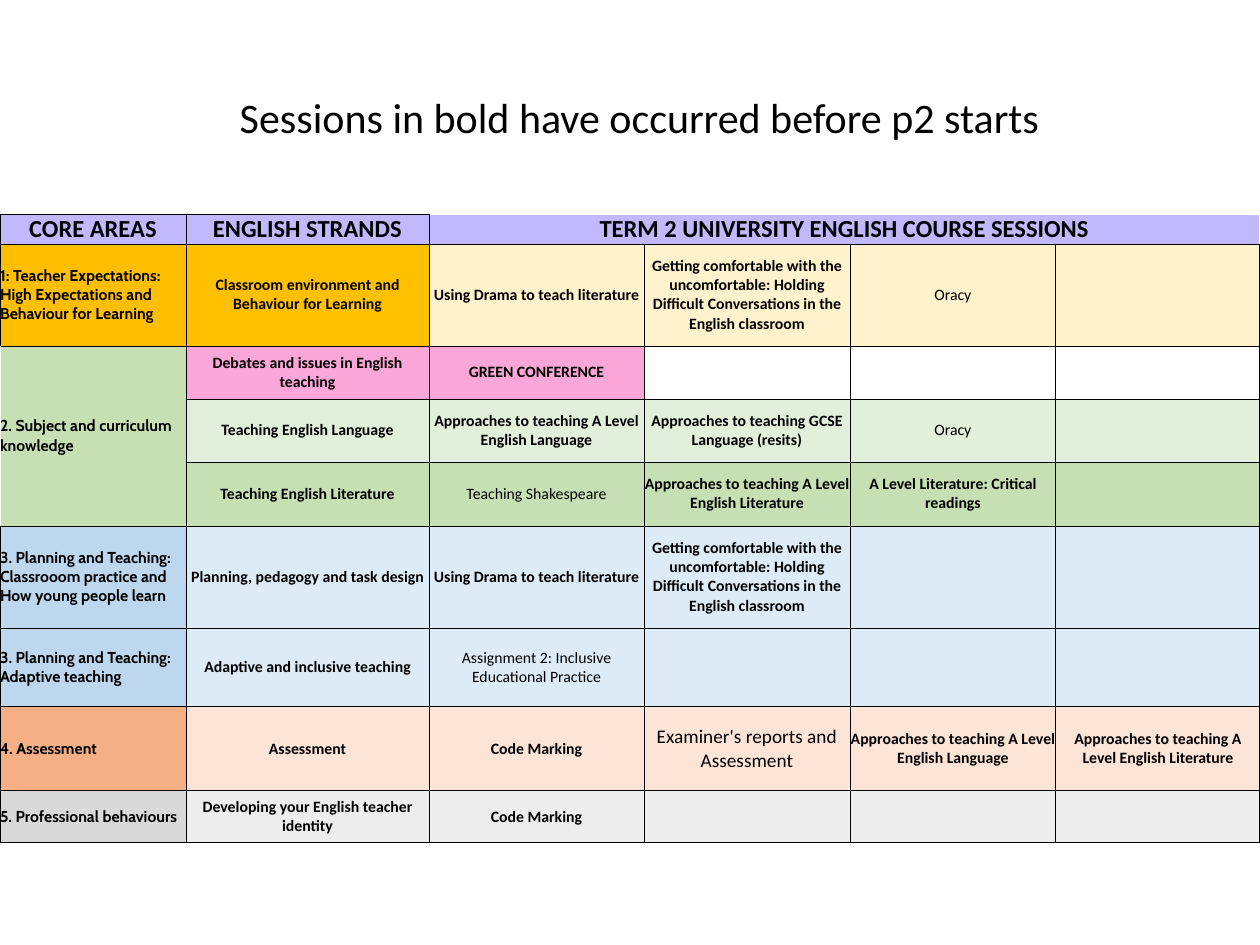
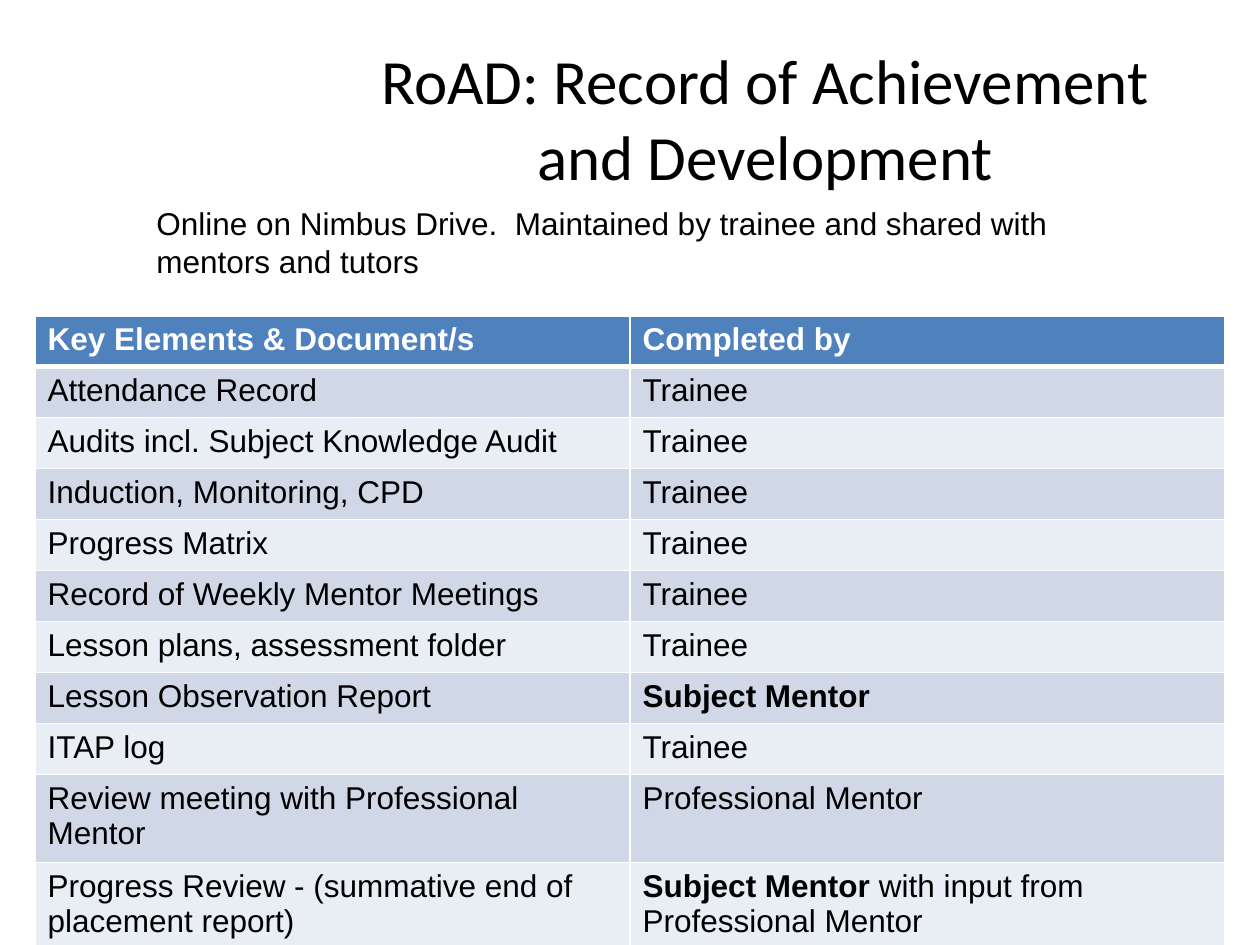
from lxml.etree import SubElement
from pptx import Presentation
from pptx.dml.color import RGBColor
from pptx.enum.text import MSO_ANCHOR as Anchor, PP_ALIGN as Align
from pptx.oxml.ns import qn
from pptx.util import Pt

PX = 914400 / 126

BLACK = RGBColor(0x00, 0x00, 0x00)
WHITE = RGBColor(0xFF, 0xFF, 0xFF)
LILAC = RGBColor(0xC1, 0xB8, 0xFE)
AMBER = RGBColor(0xFF, 0xBF, 0x00)
GOLD = RGBColor(0xFF, 0xC0, 0x00)
CREAM = RGBColor(0xFF, 0xF2, 0xCC)
PINK = RGBColor(0xFB, 0xA6, 0xD8)
GREEN = RGBColor(0xC6, 0xE0, 0xB4)
PALE_GREEN = RGBColor(0xE2, 0xEF, 0xDA)
BLUE = RGBColor(0xBD, 0xD7, 0xEE)
PALE_BLUE = RGBColor(0xDD, 0xEB, 0xF7)
ORANGE = RGBColor(0xF4, 0xB0, 0x84)
PEACH = RGBColor(0xFC, 0xE4, 0xD6)
GREY = RGBColor(0xD9, 0xD9, 0xD9)
PALE_GREY = RGBColor(0xED, 0xED, 0xED)
HEADER_BLUE = RGBColor(0x4F, 0x81, 0xBD)
BAND_DARK = RGBColor(0xD0, 0xD8, 0xE8)
BAND_LIGHT = RGBColor(0xE9, 0xED, 0xF4)


def add_table(slide, left, top, widths, heights):
    lengths = [round(n * PX) for n in (left, top, sum(widths), sum(heights))]
    table = slide.shapes.add_table(len(heights), len(widths), *lengths).table
    table.first_row = table.horz_banding = False
    for column, width in zip(table.columns, widths):
        column.width = round(width * PX)
    for row, height in zip(table.rows, heights):
        row.height = round(height * PX)
    return table


def style_cell(cell, fill, line, borders):
    properties = cell._tc.get_or_add_tcPr()
    for side in "LRTB":
        if side in borders:
            border = SubElement(properties, qn(f"a:ln{side}"), w=str(Pt(borders[side])))
            solid = SubElement(border, qn("a:solidFill"))
            SubElement(solid, qn("a:srgbClr"), val=str(line))
    cell.fill.solid()
    cell.fill.fore_color.rgb = fill


presentation = Presentation()
presentation.slide_width = round(1260 * PX)
presentation.slide_height = round(945 * PX)
blank = presentation.slide_layouts[6]
sessions_slide = presentation.slides.add_slide(blank)
road_slide = presentation.slides.add_slide(blank)

drama = "Using Drama to teach literature"
conversations = ("Getting comfortable with the uncomfortable: Holding Difficult "
                 "Conversations in the English classroom")
level_language = "Approaches to teaching A Level English Language"
level_literature = "Approaches to teaching A Level English Literature"
examiner = "Examiner's reports and Assessment"
upcoming = {"Oracy", "Teaching Shakespeare",
            "Assignment 2: Inclusive Educational Practice", examiner}

session_rows = [
    (30, LILAC, LILAC, LILAC, ["CORE AREAS", "ENGLISH STRANDS",
                               "TERM 2 UNIVERSITY ENGLISH COURSE SESSIONS"]),
    (102, AMBER, GOLD, CREAM, [
        "1: Teacher Expectations: High Expectations and Behaviour for Learning",
        "Classroom environment and Behaviour for Learning",
        drama, conversations, "Oracy"]),
    (53, GREEN, PINK, WHITE, ["2. Subject and curriculum knowledge",
                              "Debates and issues in English teaching",
                              "GREEN CONFERENCE"]),
    (63, GREEN, PALE_GREEN, PALE_GREEN, [
        "", "Teaching English Language", level_language,
        "Approaches to teaching GCSE Language (resits)", "Oracy"]),
    (64, GREEN, GREEN, GREEN, [
        "", "Teaching English Literature", "Teaching Shakespeare",
        level_literature, "A Level Literature: Critical readings"]),
    (102, BLUE, PALE_BLUE, PALE_BLUE, [
        "3. Planning and Teaching: Classrooom practice and How young people learn",
        "Planning, pedagogy and task design", drama, conversations]),
    (79, BLUE, PALE_BLUE, PALE_BLUE, [
        "3. Planning and Teaching: Adaptive teaching",
        "Adaptive and inclusive teaching",
        "Assignment 2: Inclusive Educational Practice"]),
    (84, ORANGE, PEACH, PEACH, ["4. Assessment", "Assessment", "Code Marking",
                                examiner, level_language, level_literature]),
    (52, GREY, PALE_GREY, PALE_GREY, ["5. Professional behaviours",
                                      "Developing your English teacher identity",
                                      "Code Marking"]),
]
sessions = add_table(sessions_slide, 0, 214, [186, 243, 215, 206, 206, 204],
                     [row[0] for row in session_rows])
for r, (height, area_fill, strand_fill, session_fill, texts) in enumerate(session_rows):
    fills = [area_fill, strand_fill] + [session_fill] * 4
    for c, fill in enumerate(fills):
        text = texts[c] if c < len(texts) else ""
        if text == "GREEN CONFERENCE":
            fill = PINK
        sides = "LRTB"
        if r == 0 and c >= 2:
            sides = "LB"
        elif c == 0 and 2 <= r <= 4:
            sides = "RTB"
        cell = sessions.cell(r, c)
        style_cell(cell, fill, BLACK, dict.fromkeys(sides, 0.5))
        cell.margin_left = cell.margin_right = cell.margin_top = cell.margin_bottom = 0
        cell.vertical_anchor = Anchor.MIDDLE
        if not text:
            continue
        cell.text = text
        is_area = c == 0 and r > 0
        paragraph = cell.text_frame.paragraphs[0]
        paragraph.alignment = Align.LEFT if is_area else Align.CENTER
        paragraph.font.name = "Cabin" if is_area else "Calibri"
        paragraph.font.size = Pt(14 if r == 0 else 11 if text == examiner else 9)
        paragraph.font.bold = text not in upcoming
        paragraph.font.color.rgb = BLACK
sessions.cell(0, 2).merge(sessions.cell(0, 5))
sessions.cell(2, 0).merge(sessions.cell(4, 0))

road_rows = [
    ("Key Elements & Document/s", "Completed by"),
    ("Attendance Record", "Trainee"),
    ("Audits incl. Subject Knowledge Audit", "Trainee"),
    ("Induction, Monitoring, CPD", "Trainee"),
    ("Progress Matrix", "Trainee"),
    ("Record of Weekly Mentor Meetings", "Trainee"),
    ("Lesson plans, assessment folder", "Trainee"),
    ("Lesson Observation Report", "Subject Mentor"),
    ("ITAP log", "Trainee"),
    ("Review meeting with Professional Mentor", "Professional Mentor"),
    ("Progress Review - (summative end of placement report)",
     "Subject Mentor with input from Professional Mentor"),
]
mentor = "Subject Mentor"
road = add_table(road_slide, 35, 316, [595, 595], [49] + [51] * 8 + [84] * 2)
for r, texts in enumerate(road_rows):
    fill = HEADER_BLUE if r == 0 else BAND_DARK if r % 2 else BAND_LIGHT
    borders = {"L": 1, "R": 1, "T": 3 if r == 1 else 1, "B": 3 if r == 0 else 1}
    for c, text in enumerate(texts):
        cell = road.cell(r, c)
        style_cell(cell, fill, WHITE, borders)
        paragraph = cell.text_frame.paragraphs[0]
        paragraph.font.name = "Arial"
        paragraph.font.size = Pt(18)
        paragraph.font.color.rgb = WHITE if r == 0 else BLACK
        paragraph.font.bold = r == 0
        if text.startswith(mentor):
            paragraph.add_run().text = mentor
            paragraph.runs[0].font.bold = True
            text = text.removeprefix(mentor)
        if text:
            paragraph.add_run().text = text

text_boxes = [
    (sessions_slide, (44, 38, 1191, 158), "Sessions in bold have occurred before p2 starts",
     "Calibri", 24, Align.CENTER, Anchor.MIDDLE),
    (road_slide, (333, 38, 864, 158), "RoAD: Record of Achievement and Development",
     "Calibri", 36, Align.CENTER, Anchor.MIDDLE),
    (road_slide, (144, 198, 920, 72),
     "Online on Nimbus Drive.  Maintained by trainee and shared with mentors and tutors",
     "Arial", 18, Align.LEFT, Anchor.TOP),
]
for slide, place, text, font_name, size, alignment, anchor in text_boxes:
    shape = slide.shapes.add_textbox(*(round(n * PX) for n in place))
    frame = shape.text_frame
    frame.word_wrap = True
    frame.vertical_anchor = anchor
    paragraph = frame.paragraphs[0]
    paragraph.text = text
    paragraph.alignment = alignment
    paragraph.font.name = font_name
    paragraph.font.size = Pt(size)
    paragraph.font.color.rgb = BLACK

presentation.save("out.pptx")
